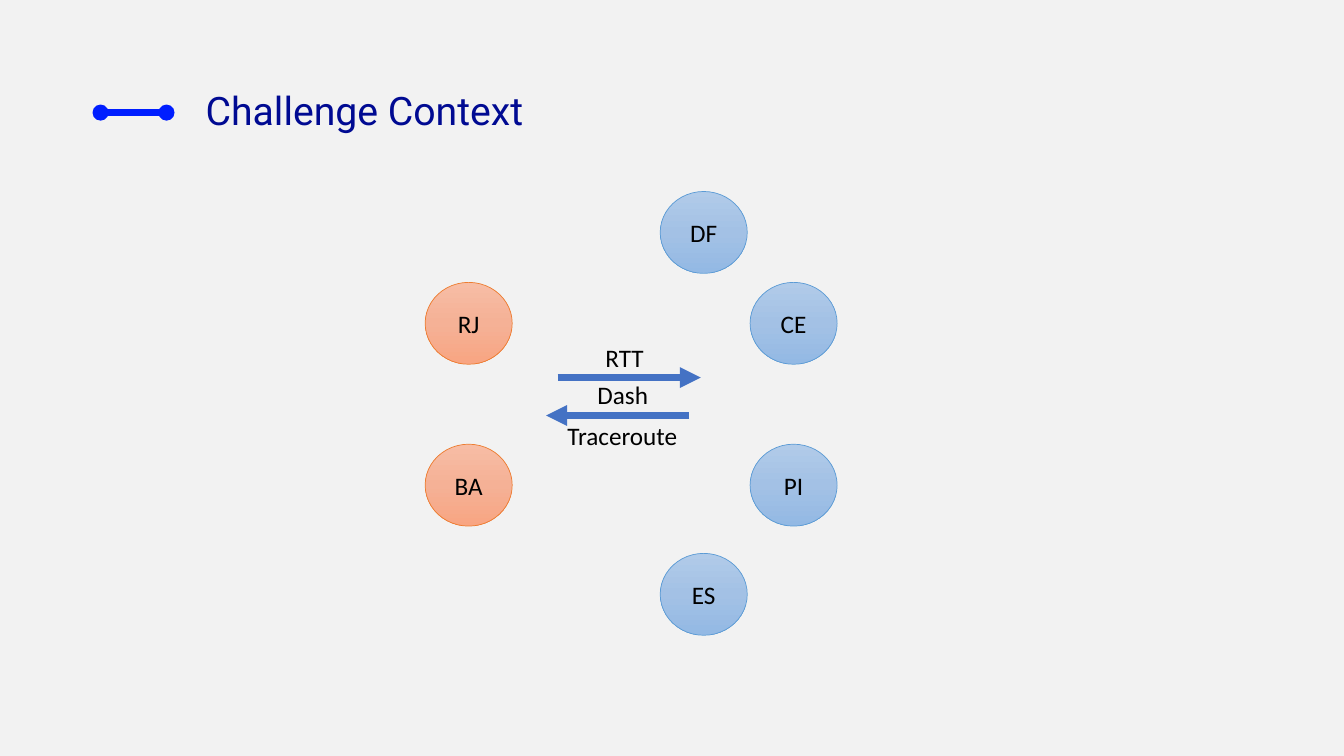
from copy import deepcopy
from dataclasses import dataclass

from lxml.etree import SubElement
from pptx import Presentation
from pptx.dml.color import RGBColor
from pptx.enum.shapes import MSO_CONNECTOR, MSO_SHAPE
from pptx.enum.text import MSO_ANCHOR, MSO_AUTO_SIZE, PP_ALIGN
from pptx.oxml.ns import qn
from pptx.shapes.autoshape import Shape
from pptx.slide import Slide
from pptx.text.text import _Paragraph as Paragraph
from pptx.util import Pt


@dataclass(frozen=True)
class NodeStyle:
    gradient: tuple[str, str, str]
    outline: str


@dataclass(frozen=True)
class Theme:
    background: str = "F2F2F2"
    accent: str = "001EFF"
    title: str = "000A92"
    text: str = "000000"
    arrow: str = "4472C4"
    title_font: str = "Roboto"
    text_font: str = "Calibri"
    title_size: float = 28
    text_size: float = 18
    client: NodeStyle = NodeStyle(("F7BDA5", "F5B196", "F8A582"), "ED7D31")
    server: NodeStyle = NodeStyle(("B1CBE9", "A3C1E5", "93B9E4"), "5B9BD5")


@dataclass(frozen=True)
class Node:
    name: str
    left: float
    top: float
    style: NodeStyle


@dataclass(frozen=True)
class Arrow:
    start: float
    end: float
    y: float


@dataclass(frozen=True)
class Label:
    text: str
    left: float
    top: float
    width: float


THEME = Theme()
NODE_WIDTH, NODE_HEIGHT = 62.2, 58.5
LABEL_HEIGHT = 29
CLIENT_LEFT, INNER_LEFT, OUTER_LEFT = 303.7, 471.6, 535.8
UPPER_TOP, LOWER_TOP = 201.7, 317.3

NODES = [
    Node("RJ", CLIENT_LEFT, UPPER_TOP, THEME.client),
    Node("BA", CLIENT_LEFT, LOWER_TOP, THEME.client),
    Node("DF", INNER_LEFT, 136.8, THEME.server),
    Node("CE", OUTER_LEFT, UPPER_TOP, THEME.server),
    Node("PI", OUTER_LEFT, LOWER_TOP, THEME.server),
    Node("ES", INNER_LEFT, 395.3, THEME.server),
]
ARROWS = [Arrow(398.4, 500.6, 269.7), Arrow(492.3, 390.1, 296.8)]
LABELS = [
    Label("RTT", 425.3, 240.6, 42.5),
    Label("Traceroute", 398.2, 297, 93.6),
    Label("Dash", 419.6, 267.4, 51.1),
]


def color(value: str) -> RGBColor:
    return RGBColor.from_string(value)


def set_font(paragraph: Paragraph, name: str, size: float, value: str) -> None:
    paragraph.font.name = name
    paragraph.font.size = Pt(size)
    paragraph.font.color.rgb = color(value)


def add_plain_shape(slide: Slide, kind: MSO_SHAPE, left: float, top: float,
                    width: float, height: float) -> Shape:
    shape = slide.shapes.add_shape(kind, Pt(left), Pt(top), Pt(width), Pt(height))
    shape.shadow.inherit = False
    return shape


def add_title(slide: Slide, text: str) -> None:
    title = slide.shapes.title
    title.left, title.top, title.width, title.height = Pt(139.7), Pt(61.9), Pt(648.7), Pt(37.4)
    frame = title.text_frame
    frame.text = text
    frame.auto_size = MSO_AUTO_SIZE.NONE
    frame.vertical_anchor = MSO_ANCHOR.BOTTOM
    paragraph = frame.paragraphs[0]
    paragraph.alignment = PP_ALIGN.LEFT
    paragraph.line_spacing = 0.9
    set_font(paragraph, THEME.title_font, THEME.title_size, THEME.title)


def add_title_marker(slide: Slide) -> None:
    parts = [
        (MSO_SHAPE.OVAL, 66.1, 74.7, 11.5, 11.5),
        (MSO_SHAPE.OVAL, 113.2, 74.7, 11.5, 11.5),
        (MSO_SHAPE.RECTANGLE, 71.8, 77.9, 47.3, 5),
    ]
    for part in parts:
        shape = add_plain_shape(slide, *part)
        shape.fill.solid()
        shape.fill.fore_color.rgb = color(THEME.accent)
        shape.line.fill.background()


def fill_gradient(shape: Shape, values: tuple[str, str, str]) -> None:
    shape.fill.gradient()
    shape.fill.gradient_angle = 270
    # The default gradient has two stops; a third goes between them
    first = shape._element.spPr.find(qn("a:gradFill")).find(qn("a:gsLst"))[0]
    first.addnext(deepcopy(first))
    for index, (stop, value) in enumerate(zip(shape.fill.gradient_stops, values)):
        stop.position = index / 2
        stop.color.rgb = color(value)


def add_node(slide: Slide, node: Node) -> None:
    shape = add_plain_shape(slide, MSO_SHAPE.OVAL, node.left, node.top, NODE_WIDTH, NODE_HEIGHT)
    fill_gradient(shape, node.style.gradient)
    shape.line.color.rgb = color(node.style.outline)
    shape.line.width = Pt(0.5)
    frame = shape.text_frame
    frame.text = node.name
    frame.vertical_anchor = MSO_ANCHOR.MIDDLE
    paragraph = frame.paragraphs[0]
    paragraph.alignment = PP_ALIGN.CENTER
    set_font(paragraph, THEME.text_font, THEME.text_size, THEME.text)


def add_arrow(slide: Slide, arrow: Arrow) -> None:
    connector = slide.shapes.add_connector(
        MSO_CONNECTOR.STRAIGHT, Pt(arrow.start), Pt(arrow.y), Pt(arrow.end), Pt(arrow.y))
    connector.line.color.rgb = color(THEME.arrow)
    connector.line.width = Pt(5)
    properties = connector._element.spPr
    SubElement(properties.find(qn("a:ln")), qn("a:tailEnd"), type="triangle")
    SubElement(properties, qn("a:effectLst"))


def add_label(slide: Slide, label: Label) -> None:
    box = slide.shapes.add_textbox(
        Pt(label.left), Pt(label.top), Pt(label.width), Pt(LABEL_HEIGHT))
    frame = box.text_frame
    frame.text = label.text
    frame.word_wrap = False
    frame.auto_size = MSO_AUTO_SIZE.SHAPE_TO_FIT_TEXT
    set_font(frame.paragraphs[0], THEME.text_font, THEME.text_size, THEME.text)


def main() -> None:
    presentation = Presentation()
    presentation.slide_width, presentation.slide_height = Pt(960), Pt(540)
    slide = presentation.slides.add_slide(presentation.slide_layouts.get_by_name("Title Only"))
    slide.background.fill.solid()
    slide.background.fill.fore_color.rgb = color(THEME.background)

    # Heading
    add_title_marker(slide)
    add_title(slide, "Challenge Context")

    # Clients, servers and the measurements between them
    for node in NODES:
        add_node(slide, node)
    for arrow in ARROWS:
        add_arrow(slide, arrow)
    for label in LABELS:
        add_label(slide, label)

    presentation.save("out.pptx")


if __name__ == "__main__":
    main()
